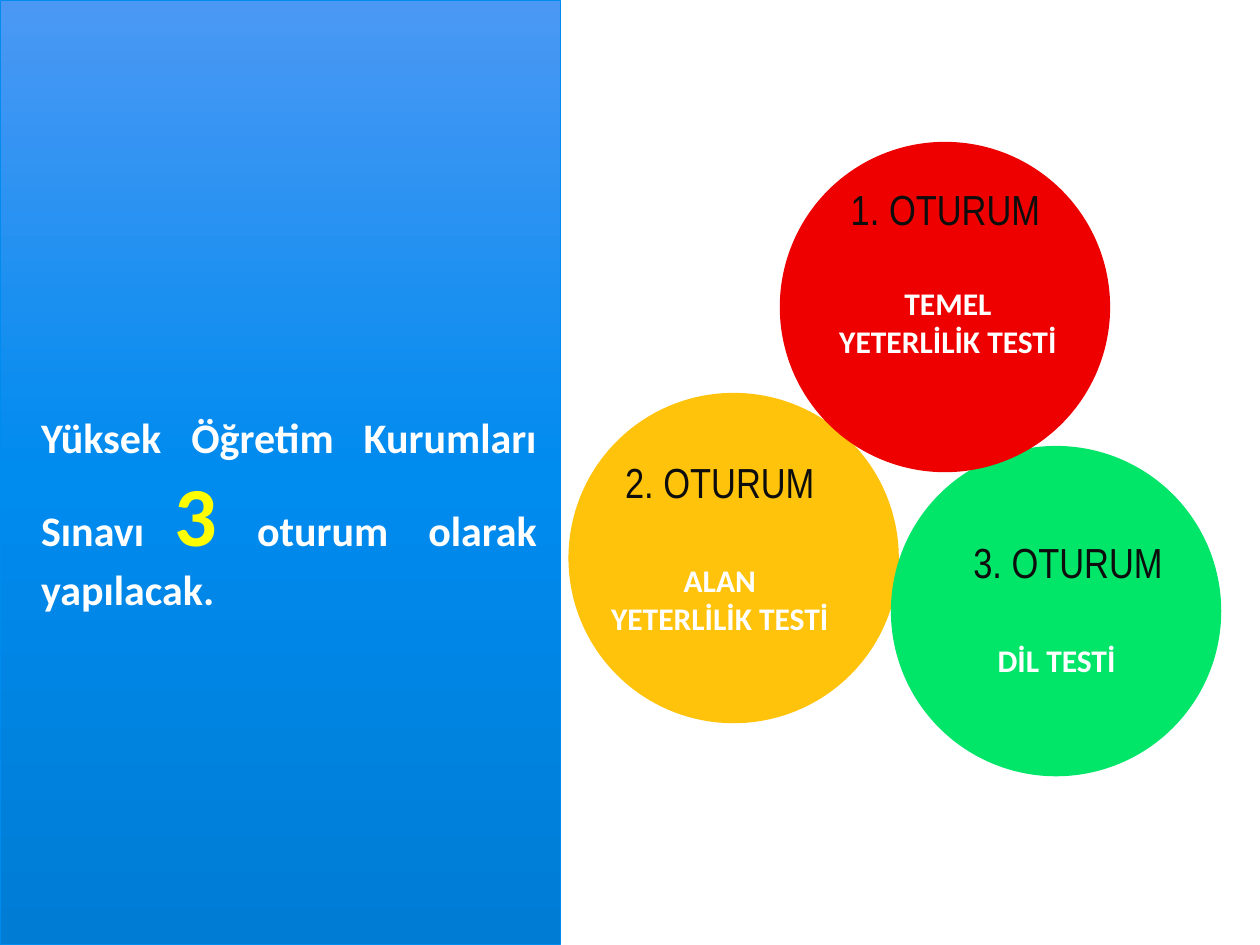
from pptx import Presentation
from pptx.dml.color import RGBColor
from pptx.enum.shapes import MSO_SHAPE
from pptx.enum.text import MSO_AUTO_SIZE, PP_ALIGN
from pptx.util import Cm, Pt

RECTANGLE, OVAL = MSO_SHAPE.RECTANGLE, MSO_SHAPE.OVAL
CENTER, JUSTIFY = PP_ALIGN.CENTER, PP_ALIGN.JUSTIFY
GROW = MSO_AUTO_SIZE.SHAPE_TO_FIT_TEXT

COLORS = {
    "panel top": "4B98F4", "panel middle": "008BEF", "panel bottom": "007CD4",
    "red": "EF0000", "amber": "FFC30B", "green": "01E569",
    "white": "FFFFFF", "yellow": "FFFF00", "ink": "0D0D0D",
}

# Content: (text, size, colour) for each part of the statement
STATEMENT = [
    ("Yüksek Öğretim Kurumları Sınavı ", 24, "white"),
    ("3 ", 48, "yellow"),
    ("oturum", 24, "white"),
    (" ", 48, "white"),
    ("olarak yapılacak.", 24, "white"),
]

# Sessions from back to front; places are (left, top) in cm
SESSIONS = [
    {"name": "2. OTURUM", "test": "ALAN YETERLİLİK TESTİ", "color": "amber",
     "circle": (11.46, 7.92), "name at": (12.06, 9.07), "test at": (12.06, 11.18)},
    {"name": "3. OTURUM", "test": "DİL TESTİ", "color": "green",
     "circle": (17.96, 8.99), "name at": (19.08, 10.69), "test at": (18.85, 12.8)},
    {"name": "1. OTURUM", "test": "TEMEL YETERLİLİK TESTİ", "color": "red",
     "circle": (15.72, 2.86), "name at": (16.61, 3.58), "test at": (16.66, 5.61)},
]
PAGE_WIDTH, PAGE_HEIGHT = 25.4, 19.05
PANEL_WIDTH = 11.3
DIAMETER = 6.66
LABEL_WIDTH = 4.9
NAME_HEIGHT, TEST_HEIGHT = 1.27, 1.8


def rgb(name):
    return RGBColor.from_string(COLORS[name])


def add_plain_shape(page, kind, left, top, width, height):
    shape = page.shapes.add_shape(kind, Cm(left), Cm(top), Cm(width), Cm(height))
    shape.shadow.inherit = False
    return shape


def add_text(page, spans, left, top, width, height,
             font="Calibri", bold=True, align=CENTER):
    box = page.shapes.add_textbox(Cm(left), Cm(top), Cm(width), Cm(height))
    box.text_frame.word_wrap = True
    box.text_frame.auto_size = GROW
    para = box.text_frame.paragraphs[0]
    para.alignment = align
    for text, size, color in spans:
        span = para.add_run()
        span.text = text
        span.font.name = font
        span.font.size = Pt(size)
        span.font.bold = bold
        span.font.color.rgb = rgb(color)


def add_panel(page):
    panel = add_plain_shape(page, RECTANGLE, 0, 0, PANEL_WIDTH, PAGE_HEIGHT)
    panel.line.color.rgb = rgb("panel middle")
    panel.line.width = Pt(0.5)
    # Two stops come with a new gradient; the middle one lies between them
    panel.fill.gradient()
    panel.fill.gradient_angle = 270
    stops = panel.fill.gradient_stops
    first, last = stops[0], stops[1]
    first.position, last.position = 0, 1
    first.color.rgb = rgb("panel middle")
    last.color.rgb = rgb("panel bottom")
    stop_list = panel.fill._fill._gradFill.gsLst
    middle = deepcopy(stop_list[0])
    middle.set("pos", "50000")
    stop_list.insert(1, middle)
    first.color.rgb = rgb("panel top")


def main():
    deck = Presentation()
    deck.slide_width, deck.slide_height = Cm(PAGE_WIDTH), Cm(PAGE_HEIGHT)
    page = deck.slides.add_slide(deck.slide_layouts[6])

    # Left panel with the statement
    add_panel(page)
    add_text(page, STATEMENT, 0.58, 8.18, 10.49, 5.13, align=JUSTIFY)

    # Session circles
    for session in SESSIONS:
        circle = add_plain_shape(page, OVAL, *session["circle"], DIAMETER, DIAMETER)
        circle.fill.solid()
        circle.fill.fore_color.rgb = rgb(session["color"])
        circle.line.fill.background()

    # Session names and tests
    for session in SESSIONS:
        add_text(page, [(session["name"], 24, "ink")], *session["name at"],
                 LABEL_WIDTH, NAME_HEIGHT, font="Arial Narrow", bold=False)
        add_text(page, [(session["test"], 18, "white")], *session["test at"],
                 LABEL_WIDTH, TEST_HEIGHT)

    deck.save("out.pptx")


from copy import deepcopy

if __name__ == "__main__":
    main()
